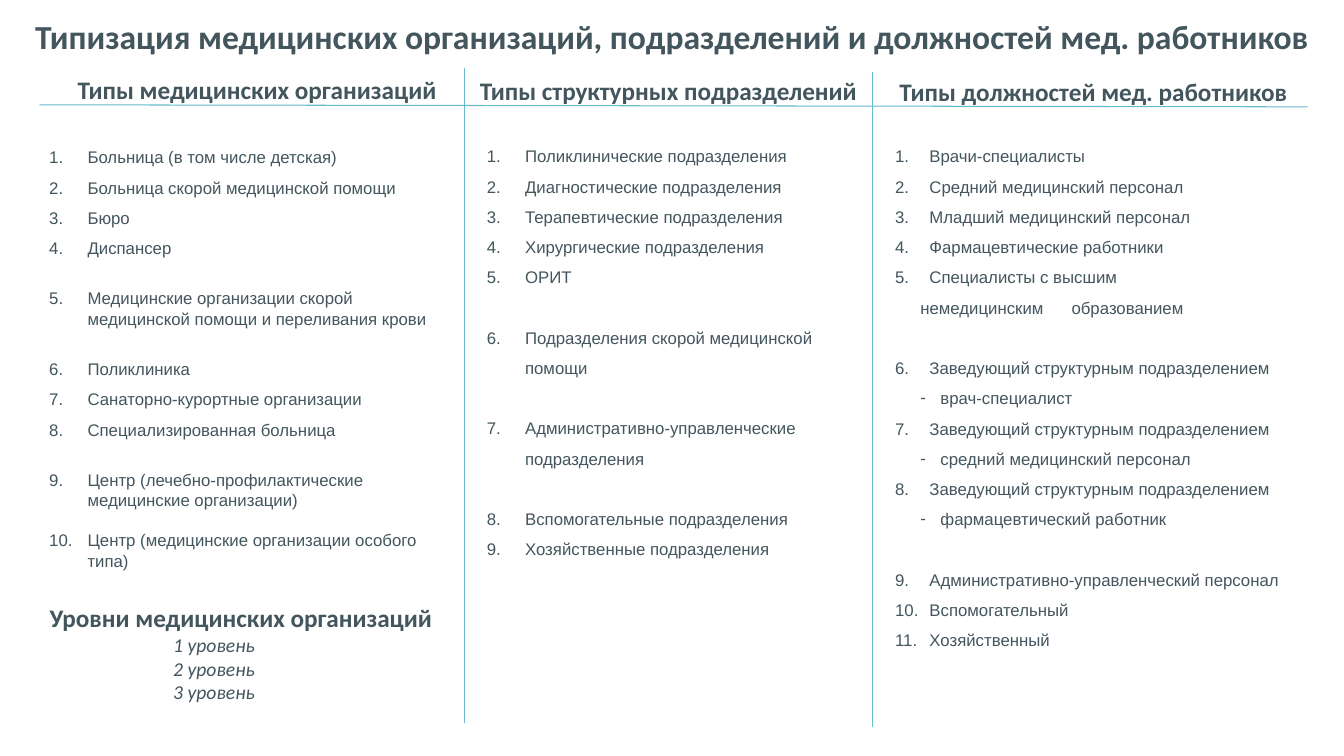
import pptx
import pptx.util
import pptx.dml.color
import pptx.enum.shapes
import pptx.enum.text
from lxml import etree
from pptx.oxml.ns import qn

Inches, Pt = pptx.util.Inches, pptx.util.Pt
INK = pptx.dml.color.RGBColor(0x43, 0x56, 0x5D)
TEAL = pptx.dml.color.RGBColor(0x68, 0xBA, 0xCD)
CENTER = pptx.enum.text.PP_ALIGN.CENTER
WIDE, TIGHT = 21.6, 14.4  # gaps before a group, in points

# text, left, top, width, height, size
HEADS = [
    ("Типы медицинских организаций", 0.22, 0.69, 4.66, 0.4, 18),
    ("Типы структурных подразделений", 4.61, 0.7, 4.04, 0.4, 18),
    ("Типы должностей мед. работников", 8.65, 0.71, 4.39, 0.4, 18),
    ("Уровни медицинских организаций", 0.06, 5.93, 4.66, 0.4, 18),
    ("Типизация медицинских организаций, подразделений и должностей мед. работников",
     0, 0.11, 13.33, 0.5, 24),
]
LEVELS = ["1 уровень", "2 уровень", "3 уровень"]

# kind of line, text, gap before, line spacing
ORGS = [
    ("num", "Больница (в том числе детская)", 0, 1.5),
    ("num", "Больница скорой медицинской помощи", 0, 1.5),
    ("num", "Бюро", 0, 1.5),
    ("num", "Диспансер", 0, 1.5),
    ("num", "Медицинские организации скорой медицинской помощи и переливания крови", WIDE, 1),
    ("num", "Поликлиника", TIGHT, 1.5),
    ("num", "Санаторно-курортные организации", 0, 1.5),
    ("num", "Специализированная больница", 0, 1.5),
    ("num", "Центр (лечебно-профилактические медицинские организации)", WIDE, 1),
    ("num", "Центр (медицинские организации особого типа)", TIGHT, 1),
]
UNITS = [
    ("num", "Поликлинические подразделения", 0, 1.5),
    ("num", "Диагностические подразделения", 0, 1.5),
    ("num", "Терапевтические подразделения", 0, 1.5),
    ("num", "Хирургические подразделения", 0, 1.5),
    ("num", "ОРИТ", 0, 1.5),
    ("num", "Подразделения скорой медицинской помощи", WIDE, 1.5),
    ("num", "Административно-управленческие подразделения", WIDE, 1.5),
    ("num", "Вспомогательные подразделения", WIDE, 1.5),
    ("num", "Хозяйственные подразделения", 0, 1.5),
]
JOBS = [
    ("num", "Врачи-специалисты", 0, 1.5),
    ("num", "Средний медицинский персонал", 0, 1.5),
    ("num", "Младший медицинский персонал", 0, 1.5),
    ("num", "Фармацевтические работники", 0, 1.5),
    ("num", "Специалисты с высшим", 0, 1.5),
    ("rest", "немедицинским\tобразованием", 0, 1.5),
    ("num", "Заведующий структурным подразделением", WIDE, 1.5),
    ("dash", "врач-специалист", 0, 1.5),
    ("num", "Заведующий структурным подразделением", 0, 1.5),
    ("dash", "средний медицинский персонал", 0, 1.5),
    ("num", "Заведующий структурным подразделением", 0, 1.5),
    ("dash", "фармацевтический работник", 0, 1.5),
    ("num", "Административно-управленческий персонал", WIDE, 1.5),
    ("num", "Вспомогательный", 0, 1.5),
    ("num", "Хозяйственный", 0, 1.5),
]
# lines, left, top, width, height, number indent
LISTS = [
    (ORGS, 0.39, 1.31, 4, 4.61, 0.38),
    (UNITS, 4.73, 1.3, 3.8, 4.3, 0.38),
    (JOBS, 8.78, 1.3, 4.26, 5.21, 0.34),
]
RULES = [
    (4.61, 0.67, 4.61, 7.17),
    (8.65, 0.71, 8.65, 7.21),
    (0.39, 1.04, 12.97, 1.06),
]


def add_box(slide, lines, left, top, width, height):
    box = slide.shapes.add_textbox(*map(Inches, (left, top, width, height)))
    frame = box.text_frame
    frame.word_wrap = True
    frame.auto_size = pptx.enum.text.MSO_AUTO_SIZE.SHAPE_TO_FIT_TEXT
    frame.text = "\n".join(lines)
    return frame.paragraphs


def style(para, name, size, bold=False, italic=False):
    for run in para.runs:
        font = run.font
        font.name, font.size = name, Pt(size)
        font.bold, font.italic = bold, italic
        font.color.rgb = INK


def indent(para, left, hang):
    props = para._p.get_or_add_pPr()
    props.set("marL", str(Inches(left)))
    props.set("indent", str(-Inches(hang)))
    return props


def mark(para, kind, count, step):
    """Give a list line its indent and its number, dash or tab stop."""
    if kind == "num":
        props = indent(para, step, step)
        etree.SubElement(props, qn("a:buFont"), typeface="+mj-lt")
        etree.SubElement(props, qn("a:buAutoNum"), type="arabicPeriod", startAt=str(count))
    elif kind == "dash":
        props = indent(para, 0.45, 0.2)
        etree.SubElement(props, qn("a:buFont"), typeface="Arial")
        etree.SubElement(props, qn("a:buChar"), char="-")
    else:
        props = indent(para, 0.25, 0)
        etree.SubElement(props, qn("a:buNone"))
        tabs = etree.SubElement(props, qn("a:tabLst"))
        etree.SubElement(tabs, qn("a:tab"), pos=str(Inches(2.07)), algn="l")


def add_list(slide, lines, left, top, width, height, step):
    paras = add_box(slide, [line[1] for line in lines], left, top, width, height)
    count = 0
    for para, (kind, _, gap, space) in zip(paras, lines):
        count += kind == "num"
        mark(para, kind, count, step)
        para.line_spacing = float(space)
        para.space_before = Pt(gap)
        style(para, "Arial", 12)


def add_rule(slide, ends):
    kind = pptx.enum.shapes.MSO_CONNECTOR.STRAIGHT
    rule = slide.shapes.add_connector(kind, *map(Inches, ends))
    rule.line.color.rgb = TEAL
    rule.line.width = Pt(0.75)
    etree.SubElement(rule._element.spPr, qn("a:effectLst"))


def main():
    deck = pptx.Presentation()
    deck.slide_width, deck.slide_height = Inches(13.33), Inches(7.5)
    slide = deck.slides.add_slide(deck.slide_layouts[6])
    for ends in RULES:
        add_rule(slide, ends)
    for text, left, top, width, height, size in HEADS:
        para = add_box(slide, [text], left, top, width, height)[0]
        para.alignment = CENTER
        style(para, "Calibri", size, bold=True)
    for column in LISTS:
        add_list(slide, *column)
    for para in add_box(slide, LEVELS, 1.62, 6.23, 1.86, 0.81):
        style(para, "Calibri", 14, italic=True)
    deck.save("out.pptx")


if __name__ == "__main__":
    main()
